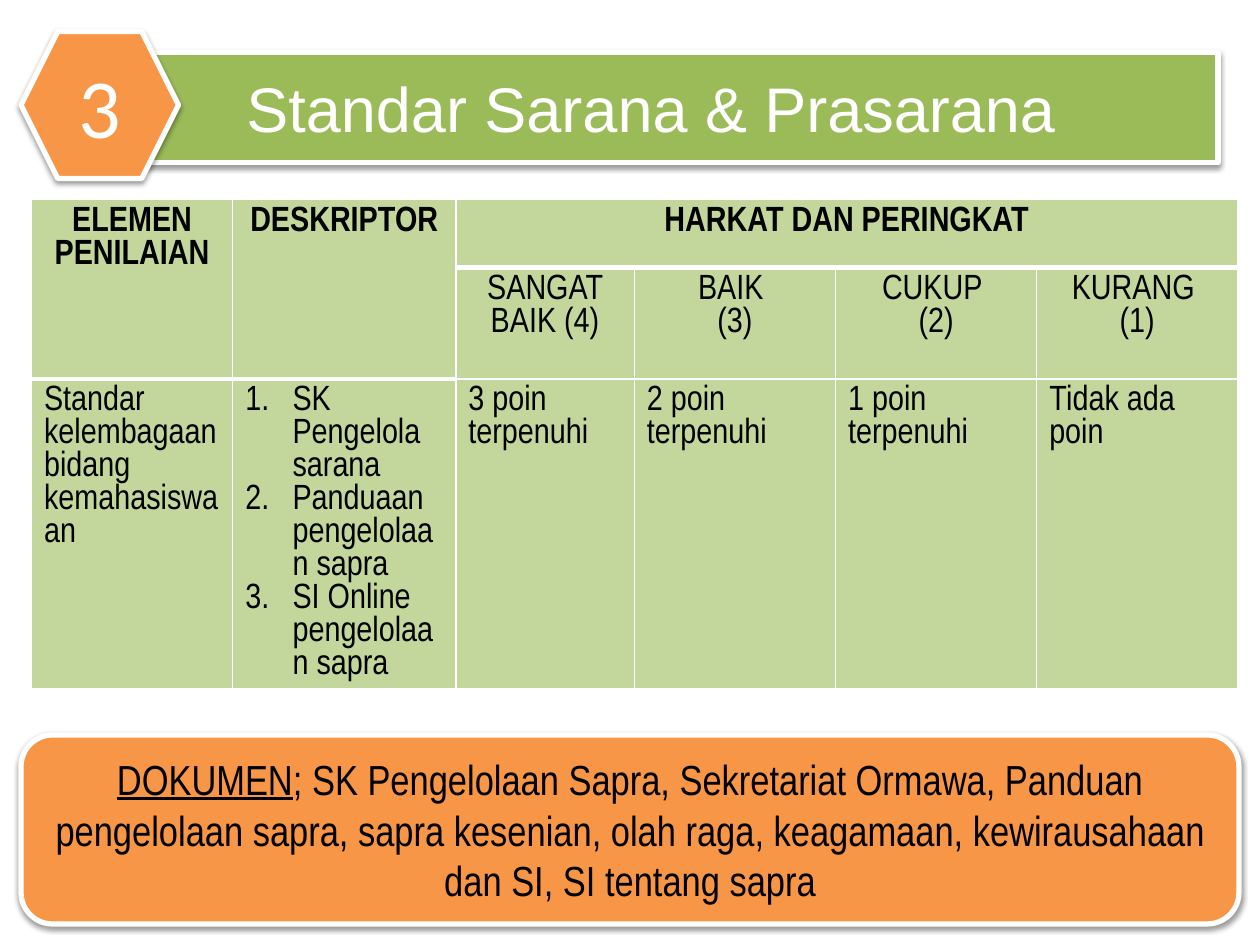
from lxml.etree import SubElement
from pptx import Presentation
from pptx.dml.color import RGBColor
from pptx.enum.shapes import MSO_SHAPE as Preset
from pptx.enum.text import MSO_ANCHOR as Anchor, PP_ALIGN as Align
from pptx.oxml import parse_xml
from pptx.oxml.ns import nsdecls, qn
from pptx.util import Pt

WHITE = RGBColor(0xFF, 0xFF, 0xFF)
BLACK = RGBColor(0, 0, 0)
GREEN = RGBColor(0x9B, 0xBB, 0x59)
LIGHT_GREEN = RGBColor(0xC3, 0xD6, 0x9B)
ORANGE = RGBColor(0xF7, 0x96, 0x46)

COLUMN_WIDTHS = [115, 127.5, 102, 115, 115, 115]
ROW_HEIGHTS = [39, 63.5, 176.5]
# (row, column, last row, last column, paragraphs)
HEADERS = [
    (0, 0, 1, 0, ["ELEMEN PENILAIAN"]),
    (0, 1, 1, 1, ["DESKRIPTOR"]),
    (0, 2, 0, 5, ["HARKAT DAN PERINGKAT"]),
]
RATINGS = [["SANGAT BAIK (4)"], ["BAIK ", "(3)"], ["CUKUP ", "(2)"], ["KURANG ", "(1)"]]
DETAILS = [
    ["Standar kelembagaan bidang kemahasiswaan"],
    ["SK Pengelola sarana", "Panduaan pengelolaan sapra", "SI Online pengelolaan sapra"],
    ["3 poin terpenuhi"],
    ["2 poin terpenuhi"],
    ["1 poin terpenuhi"],
    ["Tidak ada poin"],
]


def write_text(frame, paragraphs, font="Arial Narrow", size=20, color=BLACK, bold=False,
               align=Align.LEFT, numbered=False, underlined=""):
    """Fill a text frame; `underlined` is a lead-in put before the first paragraph."""
    frame.word_wrap = True
    for index, text in enumerate(paragraphs):
        paragraph = frame.paragraphs[0] if index == 0 else frame.add_paragraph()
        paragraph.alignment = align
        if numbered:
            properties = paragraph._p.get_or_add_pPr()
            properties.set("marL", str(Pt(27)))
            properties.set("indent", str(-Pt(27)))
            SubElement(properties, qn("a:buFont")).set("typeface", "+mj-lt")
            SubElement(properties, qn("a:buAutoNum")).set("type", "arabicPeriod")
        lead = underlined if index == 0 else ""
        for part, underline in ((lead, True), (text, False)):
            if part:
                run = paragraph.add_run()
                run.text = part
                run.font.name, run.font.size = font, Pt(size)
                run.font.bold, run.font.underline = bold, underline
                run.font.color.rgb = color


class SlideBuilder:
    """Shared style and the slide being built."""

    outline = 3
    thin_border, thick_border = 1, 3

    def __init__(self, presentation):
        self.slide = presentation.slides.add_slide(presentation.slide_layouts[5])

    def style(self, shape, fill):
        shape.fill.solid()
        shape.fill.fore_color.rgb = fill
        shape.line.color.rgb = WHITE
        shape.line.width = Pt(self.outline)
        shape.shadow.inherit = False
        effects = shape._element.spPr.find(qn("a:effectLst"))
        effects.append(parse_xml(
            f'<a:outerShdw {nsdecls("a")} blurRad="{Pt(3.1)}" dist="{Pt(1.6)}" dir="5400000" '
            'rotWithShape="0"><a:srgbClr val="000000"><a:alpha val="38000"/></a:srgbClr>'
            '</a:outerShdw>'))
        shape.text_frame.vertical_anchor = Anchor.MIDDLE

    def title(self, text, left, top, width, height):
        shape = self.slide.shapes.title
        shape.left, shape.top = Pt(left), Pt(top)
        shape.width, shape.height = Pt(width), Pt(height)
        self.style(shape, GREEN)
        write_text(shape.text_frame, [text], font="Arial", size=36, color=WHITE,
                   align=Align.CENTER)

    def shape(self, preset, text, left, top, width, height, **text_format):
        shape = self.slide.shapes.add_shape(preset, Pt(left), Pt(top), Pt(width), Pt(height))
        self.style(shape, ORANGE)
        write_text(shape.text_frame, [text], align=Align.CENTER, **text_format)

    def borders(self, cell, **widths):
        properties = cell._tc.get_or_add_tcPr()
        for index, (side, width) in enumerate(widths.items()):
            properties.insert(index, parse_xml(
                f'<a:ln{side} {nsdecls("a")} w="{Pt(width)}"><a:solidFill>'
                f'<a:srgbClr val="{WHITE}"/></a:solidFill></a:ln{side}>'))

    def table(self, left, top):
        table = self.slide.shapes.add_table(
            len(ROW_HEIGHTS), len(COLUMN_WIDTHS), Pt(left), Pt(top),
            Pt(sum(COLUMN_WIDTHS)), Pt(sum(ROW_HEIGHTS))).table
        table.first_row = table.horz_banding = False
        for column, width in zip(table.columns, COLUMN_WIDTHS):
            column.width = Pt(width)
        for row, height in zip(table.rows, ROW_HEIGHTS):
            row.height = Pt(height)

        # Fill and borders: a thick rule closes each bold header
        thin, thick = self.thin_border, self.thick_border
        for row in range(len(ROW_HEIGHTS)):
            for column in range(len(COLUMN_WIDTHS)):
                header_end = 1 if column < 2 else 0
                cell = table.cell(row, column)
                cell.fill.solid()
                cell.fill.fore_color.rgb = LIGHT_GREEN
                self.borders(cell, L=thin, R=thin,
                             T=thick if row == header_end + 1 else thin,
                             B=thick if row <= header_end else thin)

        # Text
        for row, column, last_row, last_column, paragraphs in HEADERS:
            cell = table.cell(row, column)
            cell.merge(table.cell(last_row, last_column))
            write_text(cell.text_frame, paragraphs, bold=True, align=Align.CENTER)
        for column, paragraphs in enumerate(RATINGS, start=2):
            write_text(table.cell(1, column).text_frame, paragraphs, align=Align.CENTER)
        for column, paragraphs in enumerate(DETAILS):
            write_text(table.cell(2, column).text_frame, paragraphs,
                       numbered=len(paragraphs) > 1)


def main():
    presentation = Presentation()
    presentation.slide_width, presentation.slide_height = Pt(720), Pt(540)
    builder = SlideBuilder(presentation)

    # Heading, assessment table, number badge and document list
    builder.title("Standar Sarana & Prasarana", 48, 30, 648, 63)
    builder.table(18, 114)
    builder.shape(Preset.HEXAGON, "3", 12, 18, 90, 84, font="Calibri", size=48, color=WHITE)
    builder.shape(
        Preset.ROUNDED_RECTANGLE,
        "; SK Pengelolaan Sapra, Sekretariat Ormawa, Panduan pengelolaan sapra, sapra kesenian, "
        "olah raga, keagamaan, kewirausahaan dan SI, SI tentang sapra",
        12, 420, 696, 108, size=24, underlined="DOKUMEN")

    presentation.save("out.pptx")


if __name__ == "__main__":
    main()
